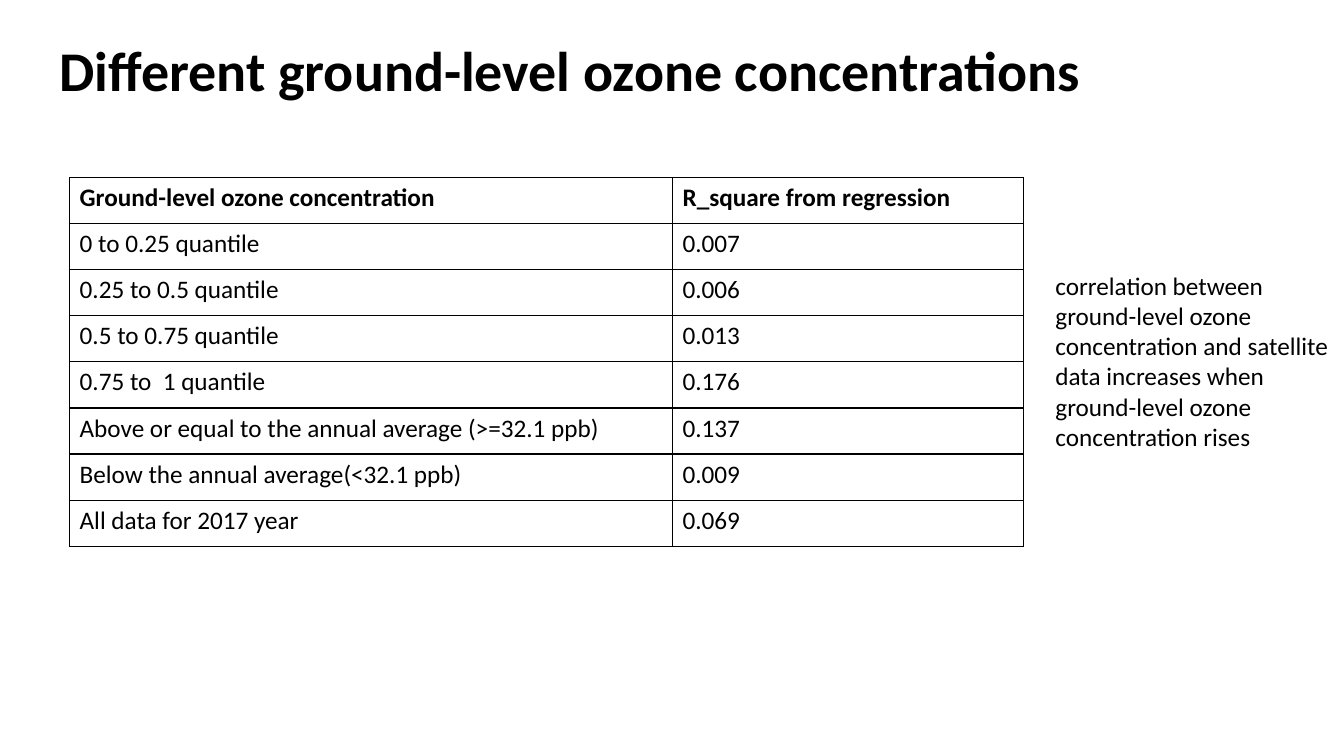
import pptx
import pptx.dml.color
import pptx.enum.text
import pptx.oxml.ns
import pptx.util
from lxml import etree

TITLE = "Different ground-level ozone concentrations"
NOTE = ("correlation between ground-level ozone concentration and satellite data "
        "increases when ground-level ozone concentration rises")
ROWS = [
    ("Ground-level ozone concentration", "R_square from regression"),
    ("0 to 0.25 quantile", "0.007"),
    ("0.25 to 0.5 quantile", "0.006"),
    ("0.5 to 0.75 quantile", "0.013"),
    ("0.75 to  1 quantile", "0.176"),
    ("Above or equal to the annual average (>=32.1 ppb)", "0.137"),
    ("Below the annual average(<32.1 ppb)", "0.009"),
    ("All data for 2017 year", "0.069"),
]

SLIDE_SIZE = (1333, 750)
TITLE_BOX = (49, 0, 1317, 145)
NOTE_BOX = (1037, 263, 303, 192)
TABLE_BOX = (69, 176, 947, 366)
COLUMN_WIDTHS = (598, 348)

FONT = "Calibri"
BLACK = pptx.dml.color.RGBColor(0, 0, 0)
WHITE = pptx.dml.color.RGBColor(255, 255, 255)
EMU_PER_PX = 9144  # 100 px to the inch


def px(length):
    return pptx.util.Emu(round(length * EMU_PER_PX))


def write_text(frame, text, size=18, bold=False, line_spacing=None,
               anchor=pptx.enum.text.MSO_ANCHOR.TOP):
    frame.word_wrap = True
    frame.vertical_anchor = anchor
    paragraph = frame.paragraphs[0]
    paragraph.alignment = pptx.enum.text.PP_ALIGN.LEFT
    paragraph.line_spacing = line_spacing
    run = paragraph.add_run()
    run.text = text
    run.font.name = FONT
    run.font.size = pptx.util.Pt(size)
    run.font.bold = bold
    run.font.color.rgb = BLACK


def add_borders(cell, color=BLACK, width=1):
    qn = pptx.oxml.ns.qn
    properties = cell._tc.get_or_add_tcPr()
    for side in ("a:lnL", "a:lnR", "a:lnT", "a:lnB"):
        line = etree.SubElement(properties, qn(side), w=str(pptx.util.Pt(width)))
        fill = etree.SubElement(line, qn("a:solidFill"))
        etree.SubElement(fill, qn("a:srgbClr"), val=str(color))


def add_title(slide):
    title = slide.shapes.title
    title.left, title.top, title.width, title.height = map(px, TITLE_BOX)
    write_text(title.text_frame, TITLE, size=40, bold=True, line_spacing=0.9,
               anchor=pptx.enum.text.MSO_ANCHOR.MIDDLE)
    title.text_frame.auto_size = pptx.enum.text.MSO_AUTO_SIZE.NONE


def add_note(slide):
    note = slide.shapes.add_textbox(*map(px, NOTE_BOX))
    write_text(note.text_frame, NOTE)
    note.text_frame.auto_size = pptx.enum.text.MSO_AUTO_SIZE.SHAPE_TO_FIT_TEXT


def add_regression_table(slide):
    frame = slide.shapes.add_table(len(ROWS), len(COLUMN_WIDTHS), *map(px, TABLE_BOX))
    table = frame.table
    table.horz_banding = False
    for column, width in zip(table.columns, COLUMN_WIDTHS):
        column.width = px(width)
    for row_index, row in enumerate(ROWS):
        for column_index, text in enumerate(row):
            cell = table.cell(row_index, column_index)
            add_borders(cell)
            cell.fill.solid()
            cell.fill.fore_color.rgb = WHITE
            write_text(cell.text_frame, text, bold=row_index == 0)


def main():
    presentation = pptx.Presentation()
    presentation.slide_width, presentation.slide_height = map(px, SLIDE_SIZE)
    slide = presentation.slides.add_slide(presentation.slide_layouts.get_by_name("Title Only"))
    slide.background.fill.solid()
    slide.background.fill.fore_color.rgb = WHITE
    add_title(slide)
    add_note(slide)
    add_regression_table(slide)
    presentation.save("out.pptx")


if __name__ == "__main__":
    main()
